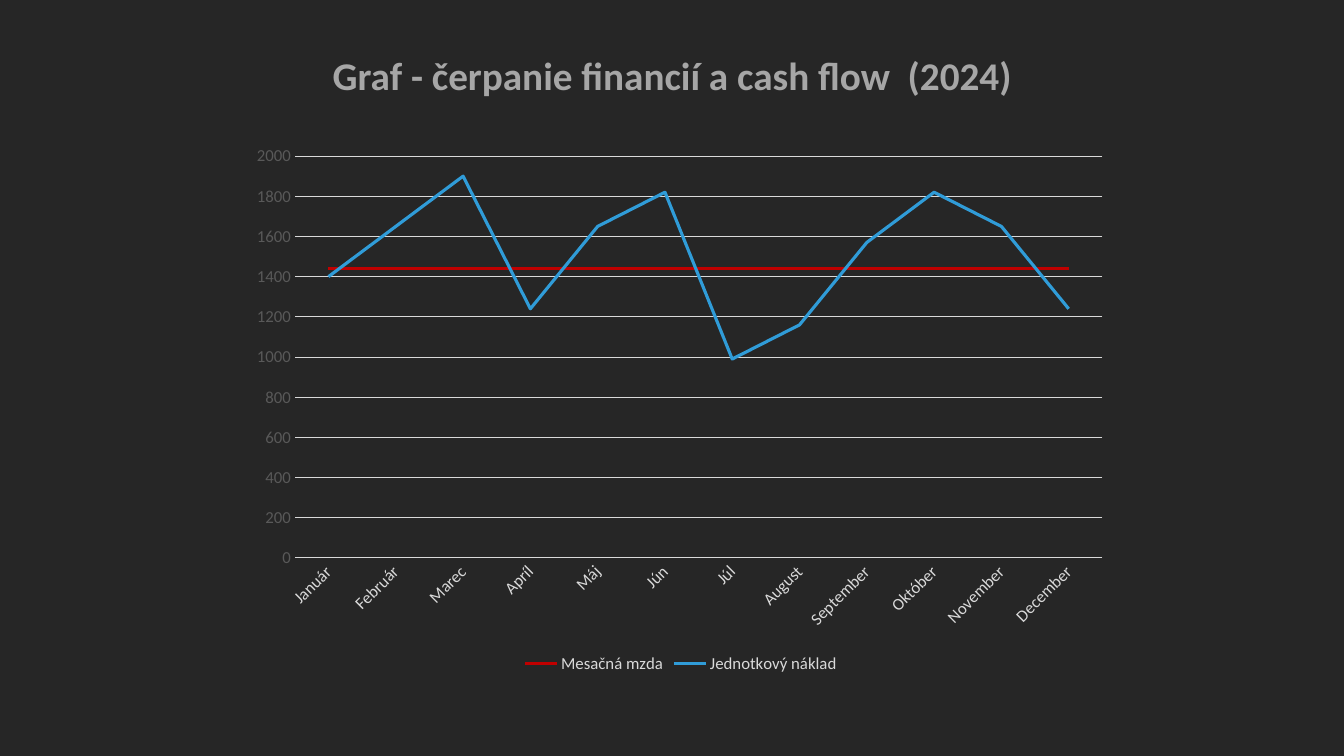
from dataclasses import dataclass

from lxml.etree import SubElement
from pptx import Presentation
from pptx.chart.chart import Chart
from pptx.chart.data import CategoryChartData
from pptx.dml.color import RGBColor
from pptx.enum.chart import XL_CHART_TYPE, XL_LEGEND_POSITION, XL_TICK_MARK
from pptx.enum.text import MSO_ANCHOR, PP_ALIGN
from pptx.oxml.ns import qn
from pptx.slide import Slide
from pptx.text.text import Font
from pptx.util import Pt

FONT = "Calibri"
BACKGROUND = "262626"
TITLE_GREY = "A6A6A6"
LIGHT_GREY = "D9D9D9"
DARK_GREY = "595959"

MONTHS = ["Január", "Február", "Marec", "Apríl", "Máj", "Jún",
          "Júl", "August", "September", "Október", "November", "December"]


@dataclass
class CostLine:
    name: str
    values: list[int]
    color: str


COST_LINES = [
    CostLine("Mesačná mzda", [1440] * len(MONTHS), "C00000"),
    CostLine("Jednotkový náklad",
             [1400, 1650, 1900, 1240, 1650, 1820, 990, 1160, 1570, 1820, 1650, 1240],
             "309CD8"),
]


def rgb(color: str) -> RGBColor:
    return RGBColor.from_string(color)


def style_font(font: Font, size: float, color: str, bold: bool = False) -> None:
    font.name = FONT
    font.size = Pt(size)
    font.bold = bold
    font.color.rgb = rgb(color)


def add_title(page: Slide, text: str) -> None:
    box = page.shapes.add_textbox(Pt(66), Pt(16), Pt(828), Pt(79))
    frame = box.text_frame
    frame.word_wrap = True
    frame.vertical_anchor = MSO_ANCHOR.MIDDLE
    frame.text = text
    para = frame.paragraphs[0]
    para.alignment = PP_ALIGN.CENTER
    para.line_spacing = 0.9
    style_font(para.runs[0].font, 28, TITLE_GREY, bold=True)


def place_plot(chart: Chart, x: float, y: float, w: float, h: float) -> None:
    """Fix the inner plot area, in fractions of the chart's size."""
    plot_area = chart._chartSpace.chart.plotArea
    for old_layout in plot_area.findall(qn("c:layout")):
        plot_area.remove(old_layout)
    layout = SubElement(plot_area, qn("c:layout"))
    plot_area.insert(0, layout)
    manual = SubElement(layout, qn("c:manualLayout"))
    settings = {"layoutTarget": "inner", "xMode": "edge", "yMode": "edge",
                "x": x, "y": y, "w": w, "h": h}
    for tag, value in settings.items():
        SubElement(manual, qn(f"c:{tag}")).set("val", str(value))


def style_axes(chart: Chart) -> None:
    months, amounts = chart.category_axis, chart.value_axis
    for axis, color in ((months, LIGHT_GREY), (amounts, DARK_GREY)):
        axis.major_tick_mark = XL_TICK_MARK.NONE
        axis.minor_tick_mark = XL_TICK_MARK.NONE
        style_font(axis.tick_labels.font, 12, color)
    amounts.minimum_scale = 0
    amounts.maximum_scale = 2000
    amounts.major_unit = 200
    amounts.format.line.fill.background()
    for line in (months.format.line, amounts.major_gridlines.format.line):
        line.color.rgb = rgb(LIGHT_GREY)
        line.width = Pt(0.75)
    label_body = months._element.find(qn("c:txPr")).find(qn("a:bodyPr"))
    label_body.set("rot", "-2700000")
    label_body.set("vert", "horz")


def add_cost_chart(page: Slide) -> None:
    data = CategoryChartData()
    data.categories = MONTHS
    for cost in COST_LINES:
        data.add_series(cost.name, cost.values)
    chart = page.shapes.add_chart(
        XL_CHART_TYPE.LINE, Pt(173), Pt(96), Pt(627), Pt(388), data).chart
    style_font(chart.font, 10, "000000")
    chart.has_title = False
    chart.has_legend = True
    chart.legend.position = XL_LEGEND_POSITION.BOTTOM
    chart.legend.include_in_layout = False
    style_font(chart.legend.font, 12, LIGHT_GREY)
    chart.plots[0].vary_by_categories = False
    for series, cost in zip(chart.plots[0].series, COST_LINES):
        series.smooth = False
        series.format.line.color.rgb = rgb(cost.color)
        series.format.line.width = Pt(2.25)
    style_axes(chart)
    place_plot(chart, 0.06, 0.04, 0.92, 0.74)


def main() -> None:
    deck = Presentation()
    deck.slide_width, deck.slide_height = Pt(960), Pt(540)
    page = deck.slides.add_slide(deck.slide_layouts[6])
    page.background.fill.solid()
    page.background.fill.fore_color.rgb = rgb(BACKGROUND)
    add_title(page, "Graf - čerpanie financií a cash flow  (2024)")
    add_cost_chart(page)
    deck.save("out.pptx")


if __name__ == "__main__":
    main()
